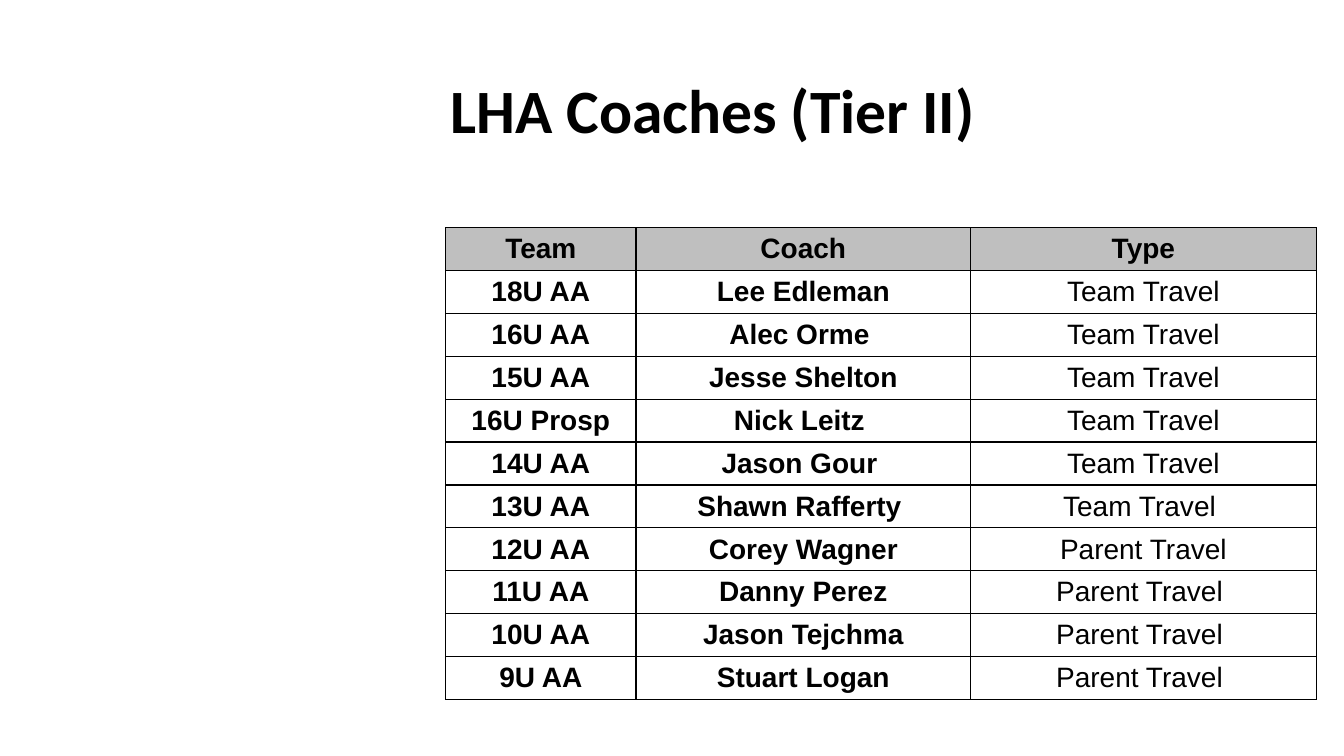
from typing import NamedTuple

import pptx
import pptx.dml.color
import pptx.enum.text
import pptx.oxml
import pptx.oxml.ns
import pptx.util

Cm = pptx.util.Cm
Pt = pptx.util.Pt
RGB = pptx.dml.color.RGBColor
ALIGN = pptx.enum.text.PP_ALIGN
MIDDLE = pptx.enum.text.MSO_ANCHOR.MIDDLE

BLACK = RGB(0x00, 0x00, 0x00)
WHITE = RGB(0xFF, 0xFF, 0xFF)
GREY = RGB(0xBF, 0xBF, 0xBF)

LEFT = Cm(11.23)
WIDTHS = (Cm(4.8), Cm(8.43), Cm(8.71))
HEIGHT = Cm(1.08)


class Row(NamedTuple):
    team: str
    coach: str
    kind: str


ROWS = (
    Row("Team", "Coach", "Type"),
    Row("18U AA", "Lee Edleman", "Team Travel"),
    Row("16U AA", "Alec Orme ", "Team Travel"),
    Row("15U AA", "Jesse Shelton", "Team Travel"),
    Row("16U Prosp", "Nick Leitz ", "Team Travel"),
    Row("14U AA", "Jason Gour ", "Team Travel"),
    Row("13U AA", "Shawn Rafferty ", "Team Travel "),
    Row("12U AA", "Corey Wagner", "Parent Travel"),
    Row("11U AA", "Danny Perez", "Parent Travel "),
    Row("10U AA", "Jason Tejchma", "Parent Travel "),
    Row("9U AA", "Stuart Logan", "Parent Travel "),
)


def style(para, name: str, size: int, bold: bool) -> None:
    font = para.font
    font.name = name
    font.size = Pt(size)
    font.bold = bold
    font.color.rgb = BLACK


def border(cell) -> None:
    """Draw a thin black line on all four sides of a cell."""
    props = cell._tc.get_or_add_tcPr()
    for spot, side in enumerate(("lnL", "lnR", "lnT", "lnB")):
        line = pptx.oxml.parse_xml(
            f'<a:{side} {pptx.oxml.ns.nsdecls("a")} w="{Pt(1)}">'
            f'<a:solidFill><a:srgbClr val="{BLACK}"/></a:solidFill></a:{side}>'
        )
        props.insert(spot, line)


def title(slide) -> None:
    box = slide.shapes.add_textbox(LEFT, Cm(1.02), Cm(20.78), Cm(3.68))
    frame = box.text_frame
    frame.word_wrap = True
    frame.vertical_anchor = MIDDLE
    frame.margin_left = frame.margin_right = Cm(0.13)
    frame.margin_top = frame.margin_bottom = Cm(0.13)
    para = frame.paragraphs[0]
    para.text = "LHA Coaches (Tier II)"
    para.line_spacing = 0.9
    style(para, "Calibri", 44, True)


def fill(cell, text: str, head: bool, bold: bool) -> None:
    cell.fill.solid()
    cell.fill.fore_color.rgb = GREY if head else WHITE
    cell.vertical_anchor = MIDDLE
    cell.margin_left = cell.margin_right = Cm(0.1)
    cell.margin_top = cell.margin_bottom = Cm(0)
    para = cell.text_frame.paragraphs[0]
    para.text = text
    para.alignment = ALIGN.CENTER
    style(para, "Arial", 20, bold)
    border(cell)


def roster(slide) -> None:
    table = slide.shapes.add_table(
        len(ROWS), len(WIDTHS), LEFT, Cm(5.74), sum(WIDTHS), HEIGHT * len(ROWS)
    ).table
    for col, width in zip(table.columns, WIDTHS):
        col.width = width
    for r, row in enumerate(ROWS):
        table.rows[r].height = HEIGHT
        head = r == 0
        for c, text in enumerate(row):
            fill(table.cell(r, c), text, head, head or c < 2)


def main() -> None:
    deck = pptx.Presentation()
    deck.slide_width = Cm(33.87)
    deck.slide_height = Cm(19.05)
    slide = deck.slides.add_slide(deck.slide_layouts[6])
    title(slide)
    roster(slide)
    deck.save("out.pptx")


if __name__ == "__main__":
    main()
